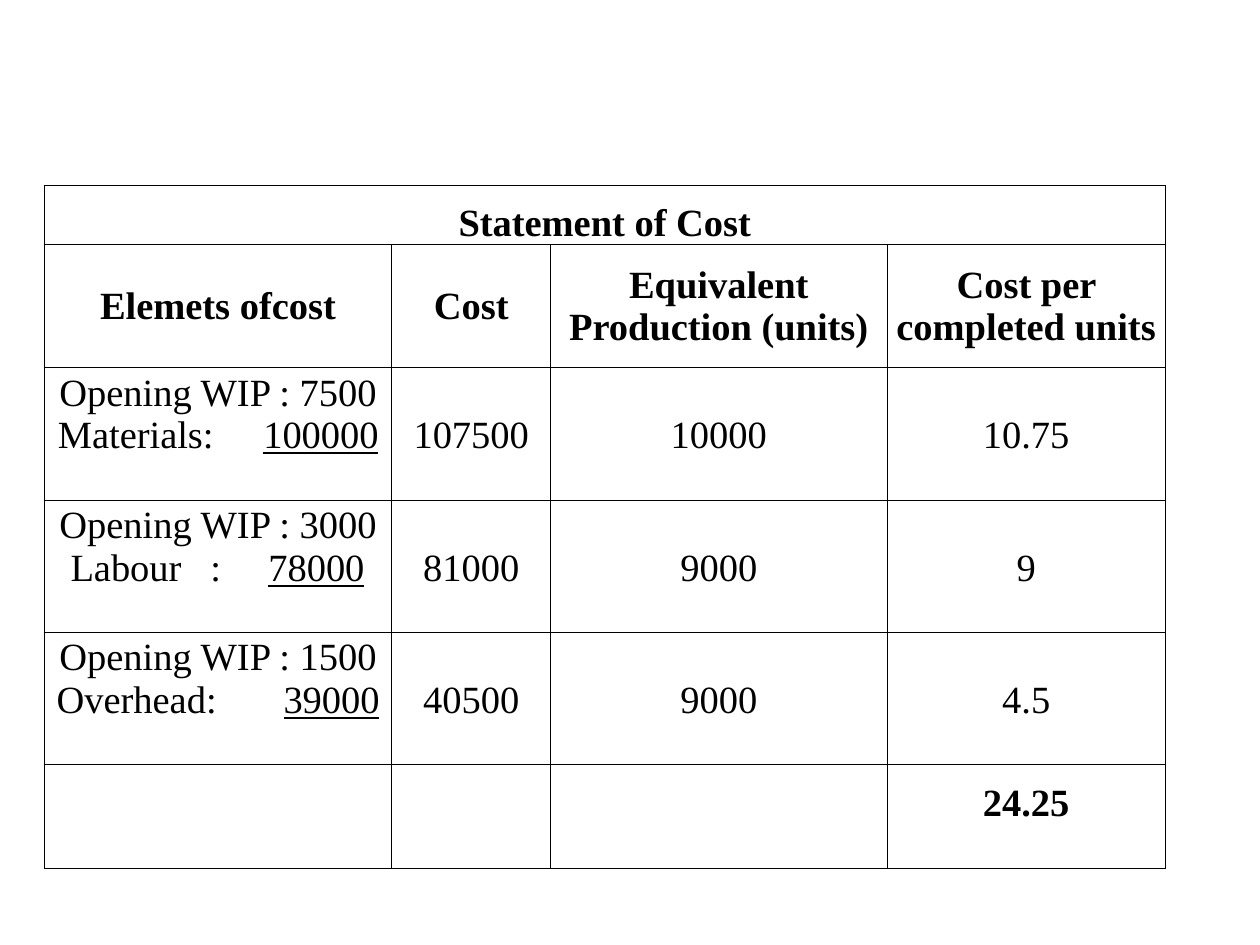
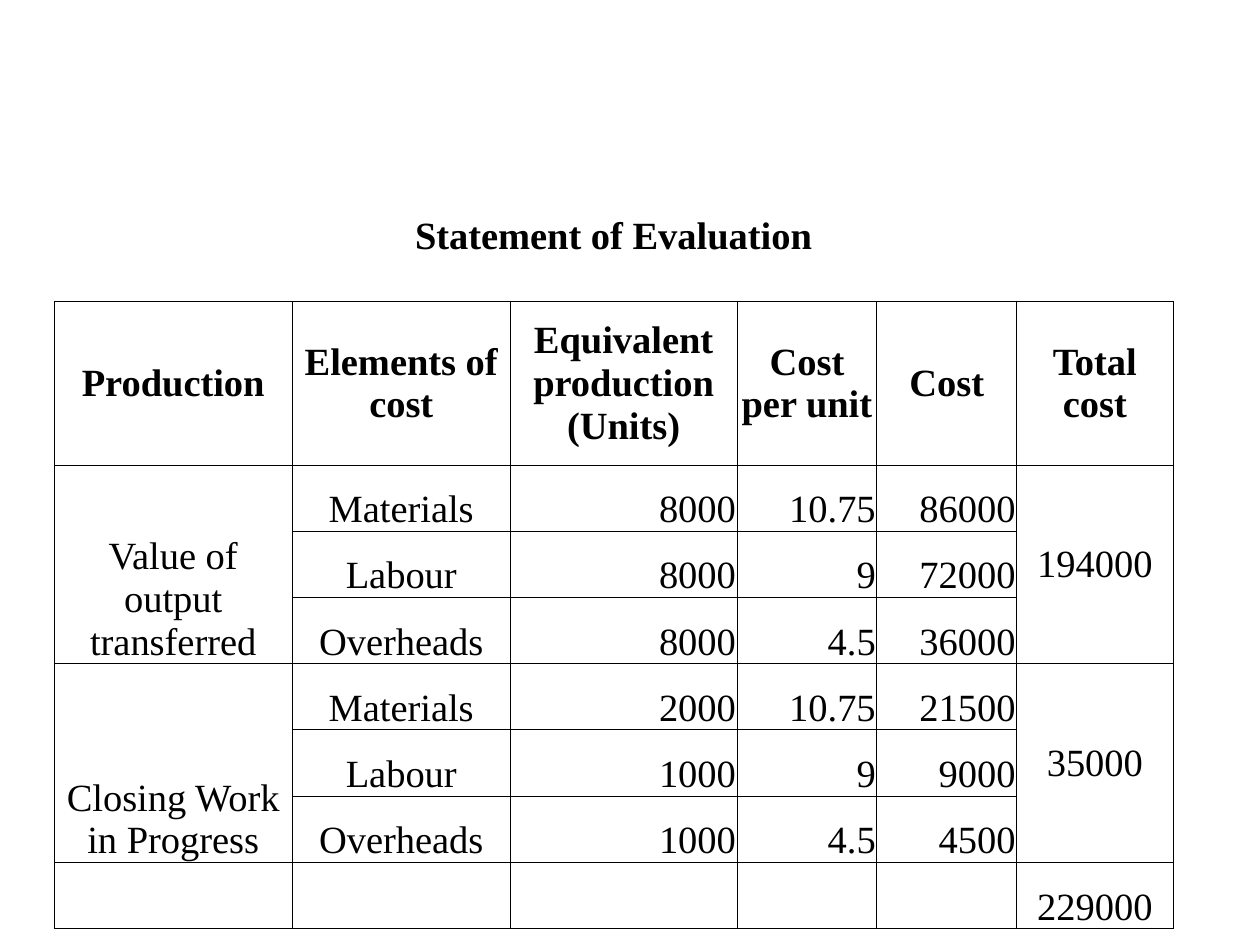
from lxml.etree import SubElement
from pptx import Presentation
from pptx.dml.color import RGBColor
from pptx.enum.text import MSO_ANCHOR as Anchor, PP_ALIGN as Align
from pptx.oxml.ns import qn
from pptx.util import Inches, Pt

COLORS = {"text": "000000", "line": "000000", "paper": "FFFFFF"}
MARGINS = {"margin_left": 0.01, "margin_right": 0.01, "margin_top": 0.01, "margin_bottom": 0}
SIDES = ("lnL", "lnR", "lnT", "lnB")
LINE_HEIGHT = 0.34


class Deck:
    def __init__(self):
        self.prs = Presentation()
        self.prs.slide_width, self.prs.slide_height = Inches(10), Inches(7.5)
        self.slide = None
        self.font = {"name": "Times New Roman", "size": Pt(22)}

    def add_slide(self):
        self.slide = self.prs.slides.add_slide(self.prs.slide_layouts[6])

    def add_grid(self, left, top, columns, rows):
        frame = self.slide.shapes.add_table(
            len(rows), len(columns), Inches(left), Inches(top),
            Inches(sum(columns)), Inches(sum(rows)))
        grid = frame.table
        grid.first_row = grid.horz_banding = False
        for column, width in zip(grid.columns, columns):
            column.width = Inches(width)
        for row, height in zip(grid.rows, rows):
            row.height = Inches(height)
        for cell in grid.iter_cells():
            self.format_cell(cell)
        return grid

    def format_cell(self, cell):
        self.border(cell, SIDES)
        cell.fill.solid()
        cell.fill.fore_color.rgb = RGBColor.from_string(COLORS["paper"])
        cell.vertical_anchor = Anchor.BOTTOM
        for margin, inches in MARGINS.items():
            setattr(cell, margin, Inches(inches))

    def border(self, cell, visible):
        properties = cell._tc.get_or_add_tcPr()
        for position, side in enumerate(SIDES):
            for previous in properties.findall(qn("a:" + side)):
                properties.remove(previous)
            line = SubElement(properties, qn("a:" + side), w=str(Pt(0.5)))
            properties.insert(position, line)
            if side in visible:
                fill = SubElement(line, qn("a:solidFill"))
                SubElement(fill, qn("a:srgbClr"), val=COLORS["line"])
            else:
                SubElement(line, qn("a:noFill"))

    def add_run(self, paragraph, words, **style):
        run = paragraph.add_run()
        run.text = words
        for attribute, value in {**self.font, **style}.items():
            setattr(run.font, attribute, value)
        run.font.color.rgb = RGBColor.from_string(COLORS["text"])

    def fill_cell(self, cell, words, align=Align.CENTER, anchor=Anchor.BOTTOM, bold=False, below=0):
        cell.vertical_anchor = anchor
        cell.margin_bottom = Inches(below)
        for index, line in enumerate(words.split("\n")):
            frame = cell.text_frame
            paragraph = frame.add_paragraph() if index else frame.paragraphs[0]
            paragraph.alignment = align
            self.add_run(paragraph, line, bold=bold)

    def fill_headings(self, grid, headings):
        for column, heading in enumerate(headings):
            self.fill_cell(grid.cell(1, column), heading, anchor=Anchor.MIDDLE, bold=True)

    def fill_element(self, cell, opening, label, amount, stops):
        self.fill_cell(cell, f"Opening WIP : {opening}", below=LINE_HEIGHT)
        paragraph = cell.text_frame.add_paragraph()
        paragraph.alignment = Align.LEFT
        tabs = SubElement(paragraph._p.get_or_add_pPr(), qn("a:tabLst"))
        for stop in stops:
            SubElement(tabs, qn("a:tab"), pos=str(Inches(stop)), algn="l")
        self.add_run(paragraph, f"\t{label}\t", bold=False)
        self.add_run(paragraph, amount, bold=False, underline=True)


def build_statement_of_cost(deck):
    deck.add_slide()
    grid = deck.add_grid(0.35, 1.47, [2.76, 1.26, 2.67, 2.21],
                         [0.47, 0.98] + [1.05] * 3 + [0.82])
    grid.cell(0, 0).merge(grid.cell(0, 3))
    deck.fill_cell(grid.cell(0, 0), "Statement of Cost", bold=True)
    deck.fill_headings(grid, ["Elemets ofcost", "Cost", "Equivalent Production (units)",
                              "Cost per completed units"])
    elements = [
        (("7500", "Materials:", "100000", (0.1, 1.73)), ("107500", "10000", "10.75")),
        (("3000", "Labour\t:", "78000", (0.2, 1.31, 1.77)), ("81000", "9000", "9")),
        (("1500", "Overhead:", "39000", (0.09, 1.89)), ("40500", "9000", "4.5")),
    ]
    for row, (element, figures) in enumerate(elements, 2):
        deck.fill_element(grid.cell(row, 0), *element)
        for column, figure in enumerate(figures, 1):
            deck.fill_cell(grid.cell(row, column), figure, below=LINE_HEIGHT)
    deck.fill_cell(grid.cell(5, 3), "24.25", bold=True, below=LINE_HEIGHT)


def build_statement_of_evaluation(deck):
    deck.add_slide()
    grid = deck.add_grid(0.43, 1.7, [1.89, 1.73, 1.8, 1.11, 1.11, 1.24],
                         [0.69, 1.3] + [3.68 / 7] * 7)
    for column in range(6):
        deck.border(grid.cell(0, column), ["lnB"])
    grid.cell(0, 0).merge(grid.cell(0, 5))
    deck.fill_cell(grid.cell(0, 0), "Statement of Evaluation", bold=True, below=LINE_HEIGHT)
    deck.fill_headings(grid, ["Production", "Elements of cost", "Equivalent production\n(Units)",
                              "Cost per unit", "Cost", "Total cost"])
    productions = [
        ("Value of output transferred", "194000",
         [("8000", "86000"), ("8000", "72000"), ("8000", "36000")]),
        ("Closing Work in Progress", "35000",
         [("2000", "21500"), ("1000", "9000"), ("1000", "4500")]),
    ]
    rates = [("Materials", "10.75"), ("Labour", "9"), ("Overheads", "4.5")]
    for group, (production, total, amounts) in enumerate(productions):
        first = 2 + group * len(rates)
        for column in (0, 5):
            grid.cell(first, column).merge(grid.cell(first + 2, column))
        deck.fill_cell(grid.cell(first, 0), production)
        deck.fill_cell(grid.cell(first, 5), total, anchor=Anchor.MIDDLE)
        for row, ((element, rate), (units, cost)) in enumerate(zip(rates, amounts), first):
            deck.fill_cell(grid.cell(row, 1), element)
            for column, figure in enumerate((units, rate, cost), 2):
                deck.fill_cell(grid.cell(row, column), figure, align=Align.RIGHT)
    deck.fill_cell(grid.cell(8, 5), "229000")


def main():
    deck = Deck()
    build_statement_of_cost(deck)
    build_statement_of_evaluation(deck)
    deck.prs.save("out.pptx")


if __name__ == "__main__":
    main()
